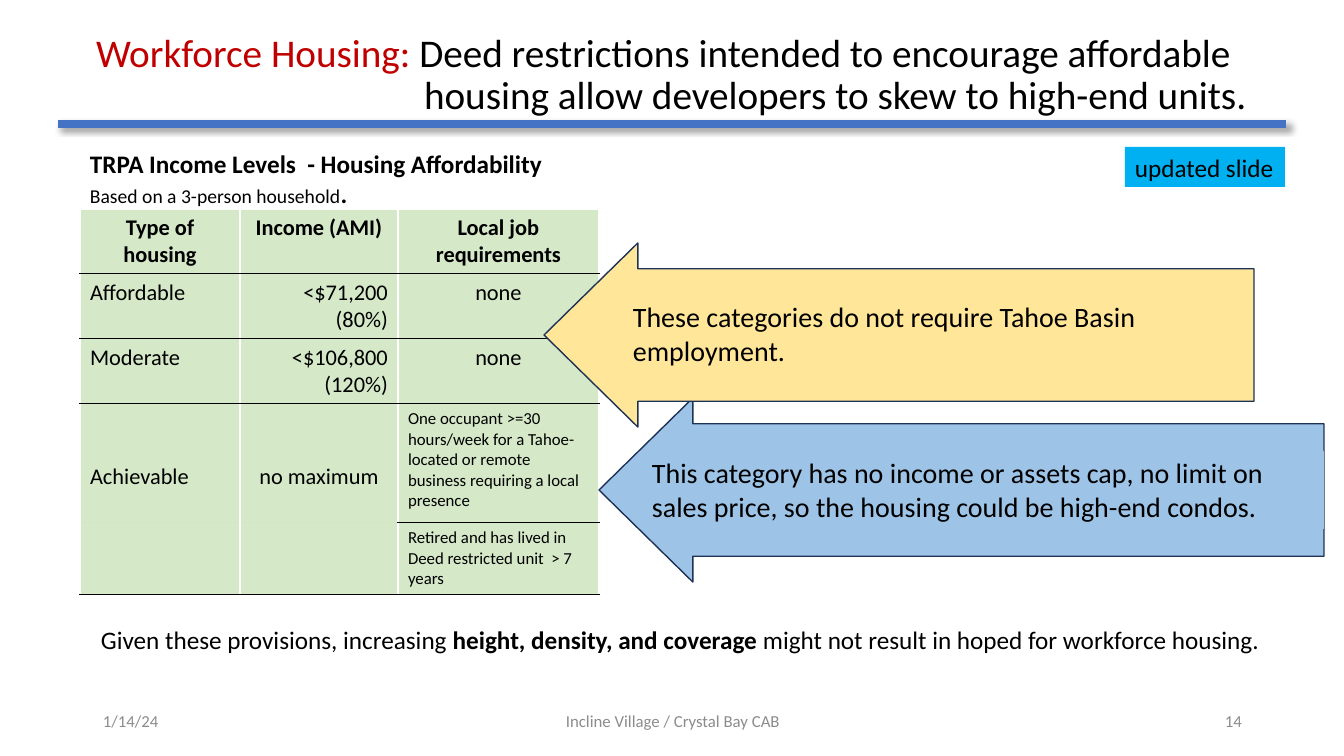
from dataclasses import dataclass

from lxml.etree import SubElement
from pptx import Presentation
from pptx.dml.color import RGBColor
from pptx.enum.shapes import MSO_CONNECTOR, MSO_SHAPE
from pptx.enum.text import MSO_ANCHOR, MSO_AUTO_SIZE, PP_ALIGN
from pptx.oxml.ns import qn
from pptx.util import Emu, Pt

EMU_PER_PX = 914400 / 100.8
LEFT, CENTER, RIGHT = PP_ALIGN.LEFT, PP_ALIGN.CENTER, PP_ALIGN.RIGHT


def px(length):
    return Emu(round(length * EMU_PER_PX))


def rgb(color):
    return RGBColor.from_string(color)


@dataclass(frozen=True)
class Theme:
    font: str = "Calibri"
    ink: str = "000000"
    accent: str = "C00000"
    muted: str = "8C8C8C"
    rule: str = "4472C4"
    outline: str = "1E3256"
    grid: str = "FFFFFF"
    cell: str = "C5E0B4"
    yellow: str = "FFE699"
    blue: str = "9DC3E6"
    tag: str = "00B0F0"
    title: int = 28
    callout: int = 20
    body: int = 18
    table: int = 16
    note: int = 14
    small: int = 12


class SlideBuilder:
    def __init__(self, presentation, theme):
        self.theme = theme
        self.slide = presentation.slides.add_slide(presentation.slide_layouts[5])

    def fill_text(self, frame, paragraphs, size, align=LEFT, anchor=MSO_ANCHOR.TOP,
                  color=None, bold=False, wrap=True):
        frame.word_wrap = wrap
        frame.auto_size = MSO_AUTO_SIZE.NONE
        frame.vertical_anchor = anchor
        self.fill_paragraphs(frame, paragraphs, size, align, color, bold)

    def fill_paragraphs(self, frame, paragraphs, size, align, color=None, bold=False):
        for index, runs in enumerate(paragraphs):
            paragraph = frame.paragraphs[0] if index == 0 else frame.add_paragraph()
            paragraph.alignment = align
            font = paragraph.font
            font.name, font.size, font.bold = self.theme.font, Pt(size), bold
            font.color.rgb = rgb(color or self.theme.ink)
            for text, changes in runs:
                run = paragraph.add_run()
                run.text = text
                if "size" in changes:
                    run.font.size = Pt(changes["size"])
                if "bold" in changes:
                    run.font.bold = changes["bold"]
                if "color" in changes:
                    run.font.color.rgb = rgb(changes["color"])

    def title(self, box, runs, indent):
        heading = self.slide.shapes.title
        heading.left, heading.top, heading.width, heading.height = map(px, box)
        self.fill_text(heading.text_frame, [runs], self.theme.title, anchor=MSO_ANCHOR.MIDDLE)
        paragraph = heading.text_frame.paragraphs[0]
        paragraph.line_spacing = 0.9
        properties = paragraph._p.get_or_add_pPr()
        properties.set("marL", str(px(indent)))
        properties.set("indent", str(-px(indent)))

    def rule(self, left, right, y):
        line = self.slide.shapes.add_connector(
            MSO_CONNECTOR.STRAIGHT, px(left), px(y), px(right), px(y))
        line.line.color.rgb = rgb(self.theme.rule)
        line.line.width = Pt(5.5)
        effects = SubElement(line._element.spPr, qn("a:effectLst"))
        shadow = SubElement(effects, qn("a:outerShdw"), blurRad=str(Pt(4)),
                            dist=str(Pt(3)), dir="2700000", algn="tl", rotWithShape="0")
        shade = SubElement(shadow, qn("a:srgbClr"), val=self.theme.ink)
        SubElement(shade, qn("a:alpha"), val="40000")

    def text(self, box, paragraphs, size, **style):
        caption = self.slide.shapes.add_textbox(*map(px, box))
        self.fill_text(caption.text_frame, paragraphs, size, **style)

    def shape(self, shapes, kind, box, fill, outline=None):
        figure = shapes.add_shape(kind, *map(px, box))
        figure.shadow.inherit = False
        figure.fill.solid()
        figure.fill.fore_color.rgb = rgb(fill)
        if outline:
            figure.line.color.rgb = rgb(outline)
            figure.line.width = Pt(1)
        else:
            figure.line.fill.background()
        return figure

    def tag(self, box, text):
        label = self.shape(self.slide.shapes, MSO_SHAPE.RECTANGLE, box, self.theme.tag)
        self.fill_text(label.text_frame, [[(text, {})]], self.theme.body, wrap=False)

    def callout(self, arrow_box, label_box, fill, text):
        group = self.slide.shapes.add_group_shape()
        arrow = self.shape(group.shapes, MSO_SHAPE.LEFT_ARROW, arrow_box, fill,
                           self.theme.outline)
        arrow.adjustments[0], arrow.adjustments[1] = 0.72, 0.51
        label = self.shape(group.shapes, MSO_SHAPE.RECTANGLE, label_box, fill)
        self.fill_text(label.text_frame, [[(text, {})]], self.theme.callout)

    def finish_cell(self, cell, top, bottom):
        properties = cell._tc.get_or_add_tcPr()
        grid = self.theme.grid
        for side, color in (("L", grid), ("R", grid), ("T", top), ("B", bottom)):
            border = SubElement(properties, qn(f"a:ln{side}"), w=str(Pt(1)))
            if color:
                paint = SubElement(border, qn("a:solidFill"))
                SubElement(paint, qn("a:srgbClr"), val=color)
            else:
                SubElement(border, qn("a:noFill"))
        paint = SubElement(properties, qn("a:solidFill"))
        tint = SubElement(paint, qn("a:srgbClr"), val=self.theme.cell)
        SubElement(tint, qn("a:alpha"), val="72000")

    def table(self, left, top, widths, heights, rows, aligns, open_below):
        theme = self.theme
        grid = self.slide.shapes.add_table(
            len(rows), len(widths), px(left), px(top), px(sum(widths)), px(sum(heights))).table
        grid.first_row = grid.horz_banding = False
        for column, width in zip(grid.columns, widths):
            column.width = px(width)
        for row, height in zip(grid.rows, heights):
            row.height = px(height)
        for r, texts in enumerate(rows):
            for c, text in enumerate(texts):
                cell = grid.cell(r, c)
                header, requirement = r == 0, r >= 3 and c == 2
                align = CENTER if header or (r, c) == (3, 1) else aligns[c]
                if text:
                    self.fill_paragraphs(cell.text_frame, [[(text, {})]],
                                         theme.small if requirement else theme.table,
                                         LEFT if requirement else align, bold=header)
                if (r, c) in open_below:
                    cell.margin_top = px(59)
                above = theme.grid if header else theme.ink
                self.finish_cell(cell, None if (r - 1, c) in open_below else above,
                                 None if (r, c) in open_below else theme.ink)


def main():
    presentation = Presentation()
    presentation.slide_width, presentation.slide_height = px(1344), px(756)
    theme = Theme()
    builder = SlideBuilder(presentation, theme)

    builder.rule(58, 1286, 124)
    builder.table(
        80, 209, (160, 158, 201), (64, 65, 65, 119, 72),
        (("Type of housing", "Income (AMI)", "Local job requirements"),
         ("Affordable", "<$71,200 (80%)", "none"),
         ("Moderate", "<$106,800 (120%)", "none"),
         ("Achievable", "no maximum",
          "One occupant >=30 hours/week for a Tahoe-located or remote business "
          "requiring a local presence"),
         ("", "", "Retired and has lived in Deed restricted unit  > 7 years")),
        (LEFT, RIGHT, CENTER), {(3, 0), (3, 1)})
    builder.title(
        (86, 3, 1194, 146),
        [("Workforce Housing: ", {"color": theme.accent}),
         ("Deed restrictions intended to encourage affordable housing allow developers "
          "to skew to high-end units.", {})], 328)
    builder.text(
        (80, 143, 548, 72),
        [[("TRPA Income Levels  - Housing Affordability", {})],
         [("Based on a 3-person household", {"size": theme.note, "bold": False}), (".", {})]],
        theme.body, bold=True)
    builder.callout(
        (599, 398, 725, 184), (642, 451, 682, 78), theme.blue,
        "This category has no income or assets cap, no limit on sales price, "
        "so the housing could be high-end condos.")
    builder.callout(
        (544, 243, 710, 184), (623, 295, 619, 78), theme.yellow,
        "These categories do not require Tahoe Basin employment.")
    builder.text(
        (91, 619, 1189, 40),
        [[("Given these provisions, increasing ", {}),
          ("height, density, and coverage", {"bold": True}),
          (" might not result in hoped for workforce housing.", {})]], theme.body)
    for left, width, text, align in (
            (93, 302, "1/14/24", LEFT),
            (446, 454, "Incline Village / Crystal Bay CAB", CENTER),
            (950, 302, "14", RIGHT)):
        builder.text((left, 701, width, 40), [[(text, {})]], theme.small, align=align,
                     anchor=MSO_ANCHOR.MIDDLE, color=theme.muted)
    builder.tag((1125, 147, 160, 40), "updated slide")

    presentation.save("out.pptx")


if __name__ == "__main__":
    main()
